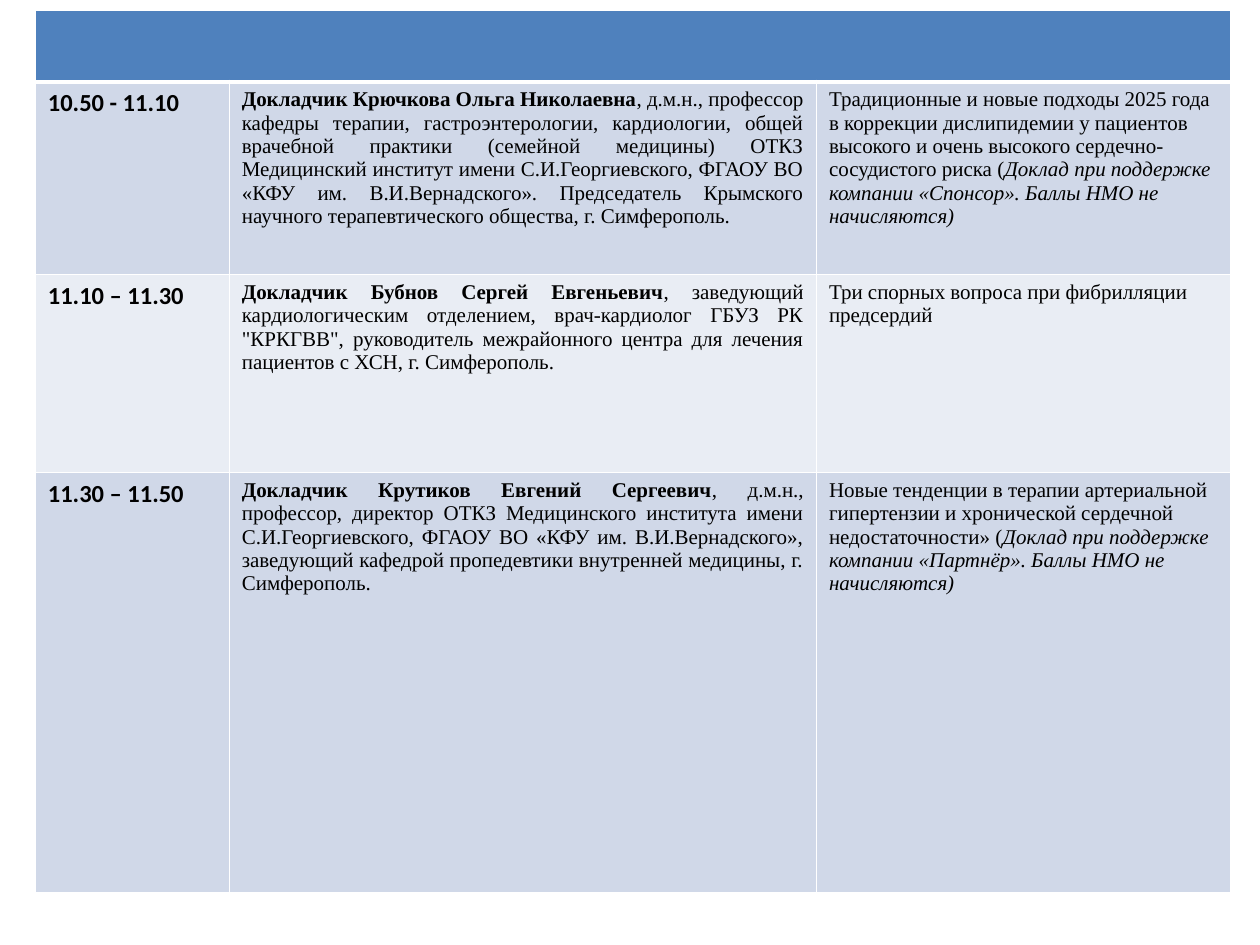
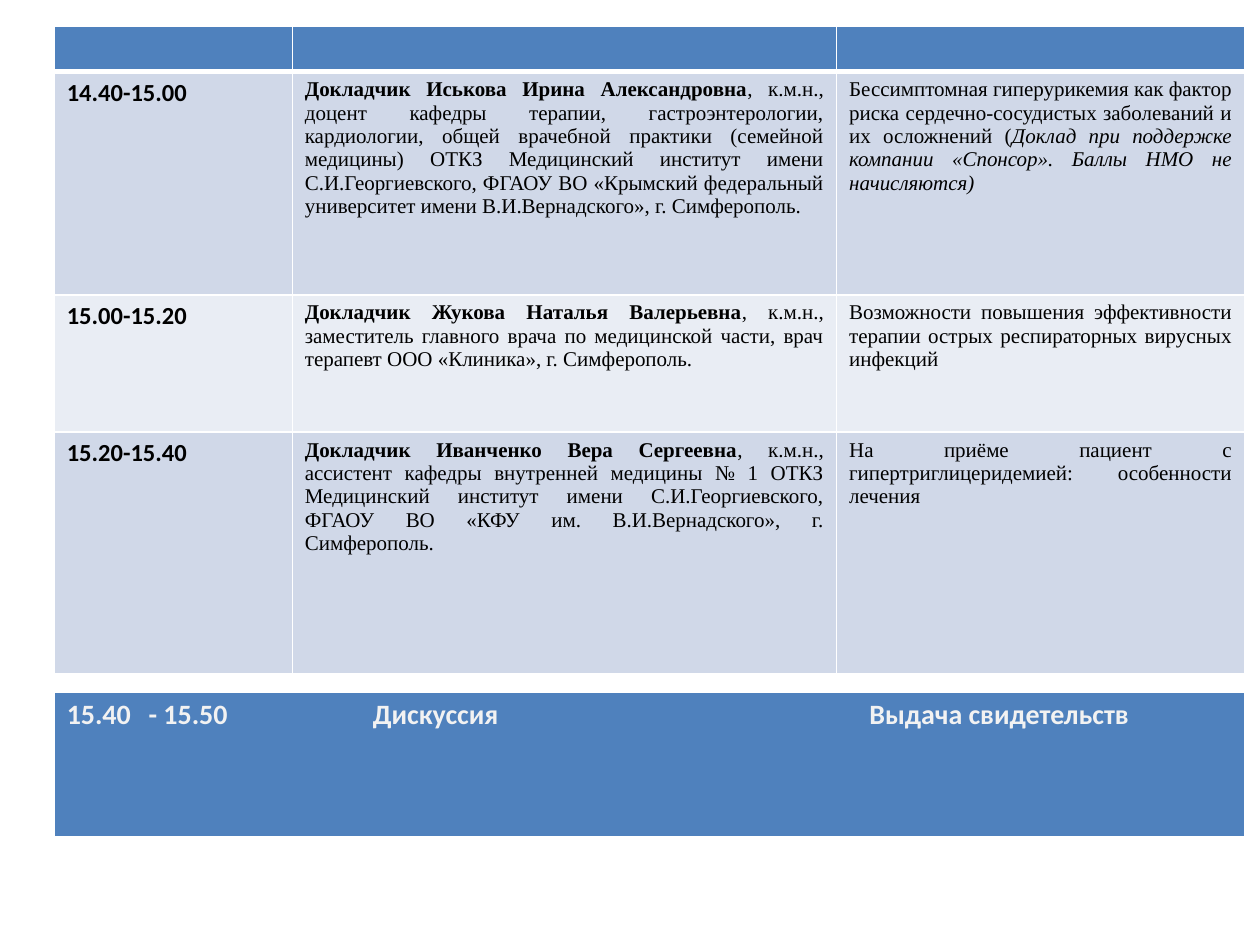
"""Build two slides of a medical conference timetable."""
from dataclasses import dataclass

import lxml.etree
import pptx
import pptx.dml.color
import pptx.enum.text
import pptx.oxml.ns
import pptx.util

Inches = pptx.util.Inches
Pt = pptx.util.Pt
Align = pptx.enum.text.PP_ALIGN
qn = pptx.oxml.ns.qn


@dataclass(frozen=True)
class Theme:
    """Hold the colours, fonts and sizes."""
    head: str = "4F81BD"
    bands: tuple = ("D0D8E8", "E9EDF4")
    line: str = "FFFFFF"
    ink: str = "000000"
    pale: str = "F2F2F2"
    sans: str = "Calibri"
    serif: str = "Times New Roman"
    time: int = 14
    body: int = 12
    close: int = 16
    thin: float = 1
    thick: float = 3


@dataclass(frozen=True)
class Talk:
    """Hold one talk of the timetable."""
    time: str
    name: str
    post: str
    topic: str
    note: str = ""


@dataclass(frozen=True)
class Grid:
    """Hold the place and sizes of a table."""
    left: float
    top: float
    cols: tuple
    rows: tuple


THEME = Theme()
TIME = {"name": THEME.sans, "size": Pt(THEME.time), "bold": True, "italic": False}
BODY = {"name": THEME.serif, "size": Pt(THEME.body), "bold": False, "italic": False}
NAME = BODY | {"bold": True}
NOTE = BODY | {"italic": True}
CLOSE = TIME | {"size": Pt(THEME.close)}

FIRST = Grid(0.28, 0.08, (1.54, 4.66, 3.29), (0.57, 1.53, 1.57, 3.34))
SECOND = Grid(0.43, 0.21, (1.89, 4.32, 3.24), (0.36, 1.77, 1.09, 1.92))
LAST = Grid(0.43, 5.49, (9.45,), (1.16,))

MORNING = (
    Talk("10.50 - 11.10", "Крючкова Ольга Николаевна",
         "д.м.н., профессор кафедры терапии, гастроэнтерологии, кардиологии, общей "
         "врачебной практики (семейной медицины) ОТКЗ Медицинский институт имени "
         "С.И.Георгиевского, ФГАОУ ВО «КФУ им. В.И.Вернадского». Председатель "
         "Крымского научного терапевтического общества, г. Симферополь.",
         "Традиционные и новые подходы 2025 года в коррекции дислипидемии у пациентов "
         "высокого и очень высокого сердечно-сосудистого риска (",
         "Доклад при поддержке компании «Спонсор». Баллы НМО не начисляются)"),
    Talk("11.10 – 11.30", "Бубнов Сергей Евгеньевич",
         "заведующий кардиологическим отделением, врач-кардиолог ГБУЗ РК \"КРКГВВ\", "
         "руководитель межрайонного центра для лечения пациентов с ХСН, г. Симферополь.",
         "Три спорных вопроса при фибрилляции предсердий"),
    Talk("11.30 – 11.50", "Крутиков Евгений Сергеевич",
         "д.м.н., профессор, директор ОТКЗ Медицинского института имени "
         "С.И.Георгиевского, ФГАОУ ВО «КФУ им. В.И.Вернадского», заведующий кафедрой "
         "пропедевтики внутренней медицины, г. Симферополь.",
         "Новые тенденции в терапии артериальной гипертензии и хронической сердечной "
         "недостаточности» (",
         "Доклад при поддержке компании «Партнёр». Баллы НМО не начисляются)"),
)
EVENING = (
    Talk("14.40-15.00", "Иськова Ирина Александровна",
         "к.м.н., доцент кафедры терапии, гастроэнтерологии, кардиологии, общей "
         "врачебной практики (семейной медицины) ОТКЗ Медицинский институт имени "
         "С.И.Георгиевского, ФГАОУ ВО «Крымский федеральный университет имени "
         "В.И.Вернадского», г. Симферополь.",
         "Бессимптомная гиперурикемия как фактор риска сердечно-сосудистых заболеваний "
         "и их осложнений (",
         "Доклад при поддержке компании «Спонсор». Баллы НМО не начисляются)"),
    Talk("15.00-15.20", "Жукова Наталья Валерьевна",
         "к.м.н., заместитель главного врача по медицинской части, врач терапевт "
         "ООО «Клиника», г. Симферополь.",
         "Возможности повышения эффективности терапии острых респираторных вирусных "
         "инфекций"),
    Talk("15.20-15.40", "Иванченко Вера Сергеевна",
         "к.м.н., ассистент кафедры внутренней медицины № 1 ОТКЗ Медицинский институт "
         "имени С.И.Георгиевского, ФГАОУ ВО «КФУ им. В.И.Вернадского», г. Симферополь.",
         "На приёме пациент с гипертриглицеридемией: особенности лечения"),
)
FINISH = ("15.40", "- 15.50", "Дискуссия", "Выдача свидетельств")
STOPS = (0.65, 2.43, 6.37)


def rgb(code: str) -> pptx.dml.color.RGBColor:
    """Turn a hex code into a colour."""
    return pptx.dml.color.RGBColor.from_string(code)


def edge(cell, side: str, width: float) -> None:
    """Draw one border of a cell."""
    props = cell._tc.get_or_add_tcPr()
    line = lxml.etree.SubElement(props, qn(f"a:ln{side}"), w=str(Pt(width)))
    fill = lxml.etree.SubElement(line, qn("a:solidFill"))
    lxml.etree.SubElement(fill, qn("a:srgbClr"), val=THEME.line)


def paint(cell, fill: str, top: float, base: float) -> None:
    """Set the borders and fill of a cell."""
    widths = {"L": THEME.thin, "R": THEME.thin, "T": top, "B": base}
    for side, width in widths.items():
        edge(cell, side, width)
    cell.fill.solid()
    cell.fill.fore_color.rgb = rgb(fill)


def write(cell, parts: tuple, ink: str = THEME.ink, align=Align.LEFT) -> None:
    """Write formatted runs into a cell."""
    para = cell.text_frame.paragraphs[0]
    para.alignment = align
    for text, style in parts:
        run = para.add_run()
        run.text = text
        for key, value in style.items():
            setattr(run.font, key, value)
        run.font.color.rgb = rgb(ink)


def build(slide, grid: Grid):
    """Add a table with a painted head and banded rows."""
    frame = slide.shapes.add_table(
        len(grid.rows), len(grid.cols), Inches(grid.left), Inches(grid.top),
        Inches(sum(grid.cols)), Inches(sum(grid.rows)))
    table = frame.table
    for col, width in zip(table.columns, grid.cols):
        col.width = Inches(width)
    for num, (row, height) in enumerate(zip(table.rows, grid.rows)):
        row.height = Inches(height)
        fill = THEME.bands[(num - 1) % 2] if num else THEME.head
        top = THEME.thick if num == 1 else THEME.thin
        base = THEME.thin if num else THEME.thick
        for cell in row.cells:
            paint(cell, fill, top, base)
    return table


def plan(slide, grid: Grid, talks: tuple, align):
    """Add a timetable of talks."""
    table = build(slide, grid)
    for cell in table.rows[0].cells:
        cell.margin_top = cell.margin_bottom = 0
    for num, talk in enumerate(talks, 1):
        time, who, what = table.rows[num].cells
        write(time, ((talk.time, TIME),))
        write(who, ((f"Докладчик {talk.name}", NAME), (f", {talk.post}", BODY)),
              align=Align.JUSTIFY)
        topic = ((talk.topic, BODY),)
        if talk.note:
            topic += ((talk.note, NOTE),)
        write(what, topic, align=align)
    return table


def finish(slide) -> None:
    """Add the closing band with tab stops."""
    cell = build(slide, LAST).cell(0, 0)
    write(cell, (("\t".join(FINISH), CLOSE),), THEME.pale)
    props = cell.text_frame.paragraphs[0]._p.get_or_add_pPr()
    tabs = lxml.etree.SubElement(props, qn("a:tabLst"))
    for stop in STOPS:
        lxml.etree.SubElement(tabs, qn("a:tab"), pos=str(Inches(stop)), algn="l")


def main() -> None:
    """Build and save the slides."""
    deck = pptx.Presentation()
    deck.slide_width, deck.slide_height = Inches(10), Inches(7.5)
    blank = deck.slide_layouts[6]
    table = plan(deck.slides.add_slide(blank), FIRST, MORNING, Align.LEFT)
    table.cell(0, 0).merge(table.cell(0, 2))
    slide = deck.slides.add_slide(blank)
    plan(slide, SECOND, EVENING, Align.JUSTIFY)
    finish(slide)
    deck.save("out.pptx")


if __name__ == "__main__":
    main()
